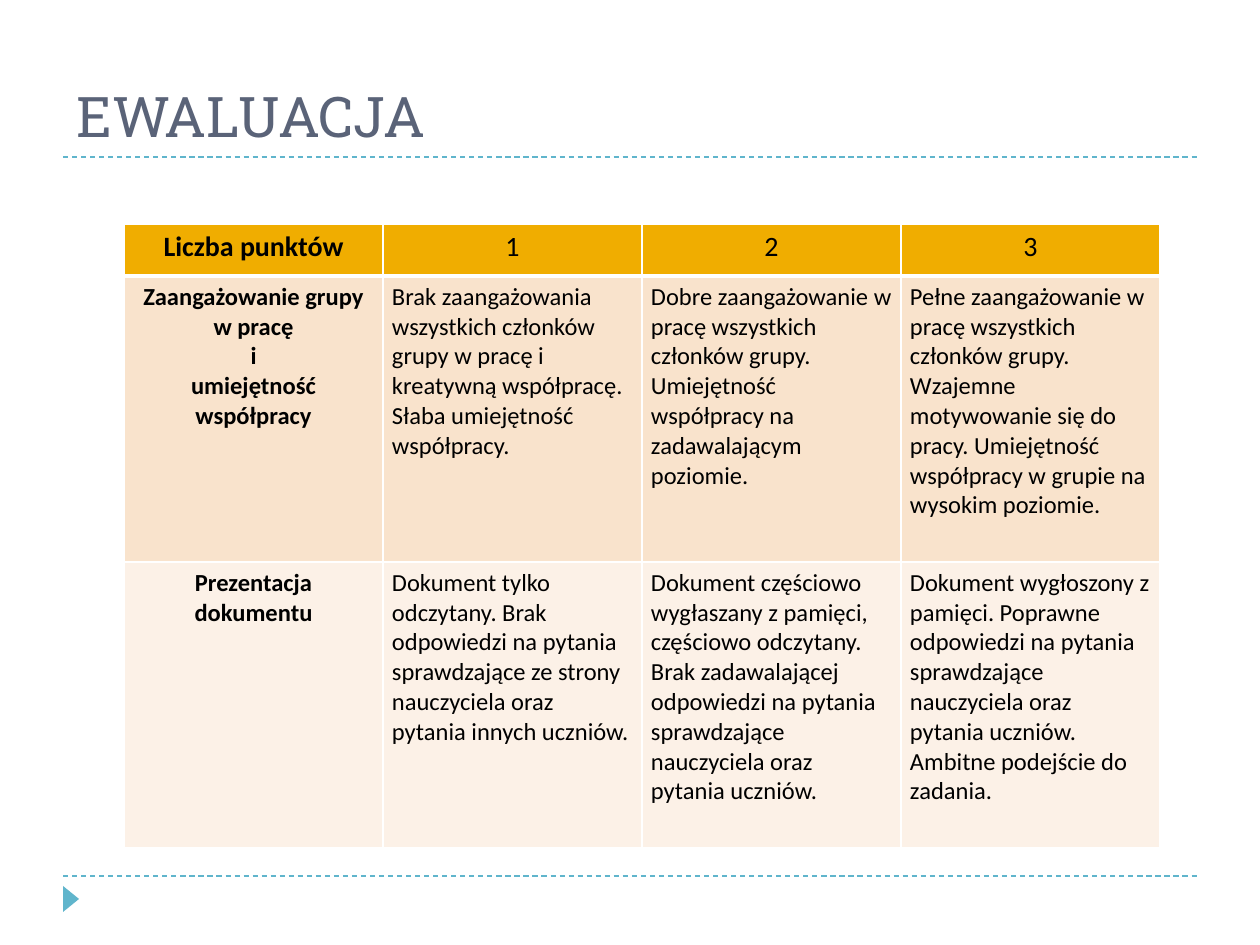
from lxml.etree import SubElement
from pptx import Presentation
from pptx.dml.color import RGBColor
from pptx.enum.dml import MSO_LINE
from pptx.enum.shapes import MSO_CONNECTOR, MSO_SHAPE
from pptx.enum.text import MSO_ANCHOR, PP_ALIGN
from pptx.oxml.ns import qn
from pptx.util import Emu, Pt

PX_PER_INCH = 126
COLORS = {
    "accent": "60B5CC",
    "title": "5A6378",
    "text": "000000",
    "border": "FFFFFF",
    "header": "F0AD00",
    "odd_row": "F9E3CC",
    "even_row": "FCF1E7",
}
RUBRIC = [
    ["Liczba punktów", "1", "2", "3"],
    [
        "Zaangażowanie grupy w pracę\vi\vumiejętność współpracy",
        "Brak zaangażowania wszystkich członków grupy w pracę i kreatywną "
        "współpracę. Słaba umiejętność współpracy.",
        "Dobre zaangażowanie w pracę wszystkich członków grupy. Umiejętność "
        "współpracy na zadawalającym poziomie.",
        "Pełne zaangażowanie w pracę wszystkich członków grupy. Wzajemne "
        "motywowanie się do pracy. Umiejętność współpracy w grupie na "
        "wysokim poziomie.",
    ],
    [
        "Prezentacja\ndokumentu",
        "Dokument tylko odczytany. Brak odpowiedzi na pytania sprawdzające "
        "ze strony nauczyciela oraz pytania innych uczniów.",
        "Dokument częściowo wygłaszany z pamięci, częściowo odczytany. Brak "
        "zadawalającej odpowiedzi na pytania sprawdzające nauczyciela oraz "
        "pytania uczniów.",
        "Dokument wygłoszony z pamięci. Poprawne odpowiedzi na pytania "
        "sprawdzające nauczyciela oraz pytania uczniów.\n"
        "Ambitne podejście do zadania.",
    ],
]
ROW_FILLS = ["header", "odd_row", "even_row"]
ROW_HEIGHTS = [52, 286, 286]
COLUMN_WIDTH = 259


def px(length):
    return Emu(round(length * 914400 / PX_PER_INCH))


def color(name):
    return RGBColor.from_string(COLORS[name])


def style_text(frame, font_name, size, color_name, bold=False, align=PP_ALIGN.LEFT):
    for paragraph in frame.paragraphs:
        paragraph.alignment = align
        for run in paragraph.runs:
            run.font.name = font_name
            run.font.size = Pt(size)
            run.font.bold = bold
            run.font.color.rgb = color(color_name)


def add_dashed_rule(slide, y):
    rule = slide.shapes.add_connector(
        MSO_CONNECTOR.STRAIGHT, px(63), px(y), px(1197), px(y)
    )
    rule.line.color.rgb = color("accent")
    rule.line.width = Pt(0.75)
    rule.line.dash_style = MSO_LINE.DASH
    SubElement(rule._element.spPr, qn("a:effectLst"))


def add_page_marker(slide):
    marker = slide.shapes.add_shape(
        MSO_SHAPE.ISOSCELES_TRIANGLE, px(58), px(891), px(26), px(16)
    )
    marker.rotation = 90
    marker.shadow.inherit = False
    marker.fill.solid()
    marker.fill.fore_color.rgb = color("accent")
    marker.line.fill.background()


def add_title(slide, wording):
    title = slide.shapes.add_textbox(px(64), px(26), px(1036), px(129))
    frame = title.text_frame
    frame.word_wrap = True
    frame.vertical_anchor = MSO_ANCHOR.BOTTOM
    frame.text = wording
    style_text(frame, "Roboto Slab", 32, "title")


def set_borders(cell, top, bottom):
    properties = cell._tc.get_or_add_tcPr()
    for side, width in {"L": 1, "R": 1, "T": top, "B": bottom}.items():
        border = SubElement(properties, qn(f"a:ln{side}"), w=str(Pt(width)))
        fill = SubElement(border, qn("a:solidFill"))
        SubElement(fill, qn("a:srgbClr"), val=COLORS["border"])


def fill_cell(cell, wording, row, column):
    is_header = row == 0
    is_label = column == 0
    cell.margin_left = cell.margin_right = px(9)
    cell.margin_top = cell.margin_bottom = px(6)
    set_borders(cell, top=3 if row == 1 else 1, bottom=3 if is_header else 1)
    cell.fill.solid()
    cell.fill.fore_color.rgb = color(ROW_FILLS[row])
    cell.text_frame.text = wording
    style_text(
        cell.text_frame,
        "Calibri",
        16 if is_header else 14,
        "text",
        bold=is_label,
        align=PP_ALIGN.CENTER if is_header or is_label else PP_ALIGN.LEFT,
    )


def add_rubric(slide):
    rows, columns = len(RUBRIC), len(RUBRIC[0])
    table = slide.shapes.add_table(
        rows, columns, px(124), px(224),
        px(COLUMN_WIDTH * columns), px(sum(ROW_HEIGHTS)),
    ).table
    for column in table.columns:
        column.width = px(COLUMN_WIDTH)
    for row, wordings in enumerate(RUBRIC):
        table.rows[row].height = px(ROW_HEIGHTS[row])
        for column, wording in enumerate(wordings):
            fill_cell(table.cell(row, column), wording, row, column)


def main():
    presentation = Presentation()
    presentation.slide_width = px(1260)
    presentation.slide_height = px(945)
    slide = presentation.slides.add_slide(presentation.slide_layouts[6])
    for y in (876, 157):
        add_dashed_rule(slide, y)
    add_page_marker(slide)
    add_title(slide, "EWALUACJA")
    add_rubric(slide)
    presentation.save("out.pptx")


if __name__ == "__main__":
    main()
